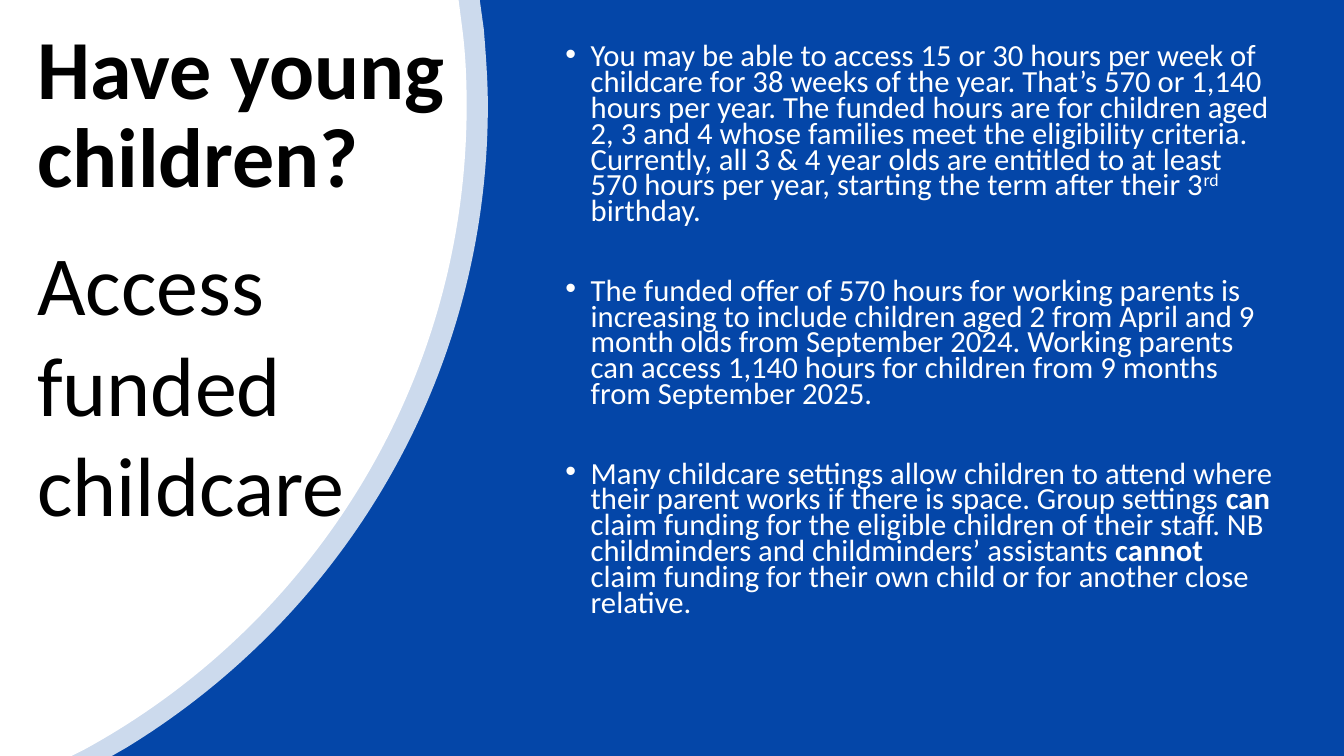
from dataclasses import dataclass

from lxml.etree import Element, SubElement
from pptx import Presentation
from pptx.dml.color import RGBColor
from pptx.enum.text import MSO_ANCHOR as Anchor, MSO_AUTO_SIZE as AutoSize, PP_ALIGN as Align
from pptx.oxml.ns import qn
from pptx.util import Pt


@dataclass(frozen=True)
class Theme:
    """Colours, font and type sizes of the slide."""
    blue: str = "0446A8"
    white: str = "FFFFFF"
    black: str = "000000"
    font: str = "Calibri"
    heading: float = 60
    body: float = 21.9


THEME = Theme()

OUTER_EDGE = [(342.72, 0), (345.6, 20.88)]
OUTER_CURVES = [
    [(347.04, 38.88), (348.48, 57.6), (348.48, 75.6)],
    [(348.48, 270), (244.8, 439.92), (90, 534.24)],
]
INNER_EDGE = [(327.6, 0), (330.48, 22.32)]
INNER_CURVES = [
    [(332.64, 39.6), (333.36, 57.6), (333.36, 75.6)],
    [(333.36, 274.32), (222.48, 447.12), (59.76, 535.68)],
]

FUNDING = [
    [
        ("You may be able to access 15 or 30 hours per week of childcare for 38 weeks of the year. "
         "That’s 570 or 1,140 hours per year. The funded hours are for children aged 2, 3 and 4 "
         "whose families meet the eligibility criteria. Currently, all 3 & 4 year olds are entitled "
         "to at least 570 hours per year, starting the term after their 3", ""),
        ("rd", "super"),
        (" birthday.", ""),
    ],
    [
        ("The funded offer of 570 hours for working parents is increasing to include children aged 2 "
         "from April and 9 month olds from September 2024. Working parents can access 1,140 hours "
         "for children from 9 months from September 2025.", ""),
    ],
    [
        ("Many childcare settings allow children to attend where their parent works if there is "
         "space. Group settings ", ""),
        ("can", "bold"),
        (" claim funding for the eligible children of their staff. NB childminders and "
         "childminders’ assistants ", ""),
        ("cannot", "bold"),
        (" claim funding for their own child or for another close relative.", ""),
    ],
]


def bend(line, handles):
    """Turn a straight path segment into a cubic curve with two handles."""
    line.tag = qn("a:cubicBezTo")
    for index, (x, y) in enumerate(handles):
        point = Element(qn("a:pt"), x=str(Pt(x)), y=str(Pt(y)))
        line.insert(index, point)


def add_panel(page, edge, curves, foot, opacity=100):
    """Add a white panel with a curved right edge that meets the slide foot."""
    corners = edge + [curve[-1] for curve in curves] + [(foot, 540), (0, 540)]
    builder = page.shapes.build_freeform(0, 0, scale=1.0)
    builder.add_line_segments([(Pt(x), Pt(y)) for x, y in corners], close=True)
    panel = builder.convert_to_shape()
    lines = list(panel.element.iter(qn("a:lnTo")))
    for line, curve in zip(lines[len(edge):], curves):
        bend(line, curve[:2])
    panel.shadow.inherit = False
    panel.line.fill.background()
    panel.fill.solid()
    panel.fill.fore_color.rgb = RGBColor.from_string(THEME.white)
    if opacity < 100:
        colour = panel.element.spPr.find(f"{qn('a:solidFill')}/{qn('a:srgbClr')}")
        SubElement(colour, qn("a:alpha")).set("val", str(opacity * 1000))


def place(box, left, top, width, height):
    """Set the position and frame of a text shape and return its frame."""
    box.left, box.top, box.width, box.height = map(Pt, (left, top, width, height))
    frame = box.text_frame
    frame.word_wrap = True
    frame.auto_size = AutoSize.NONE
    frame.vertical_anchor = Anchor.TOP
    return frame


def add_span(para, text, size, colour, style=""):
    """Add one formatted run to a paragraph."""
    span = para.add_run()
    span.text = text
    span.font.name = THEME.font
    span.font.size = Pt(size)
    span.font.bold = style == "bold"
    span.font.color.rgb = RGBColor.from_string(colour)
    if style == "super":
        span.font._element.set("baseline", "30000")


def fill_list(frame, items, indent, gap):
    """Write a bulleted list with a hanging indent and gaps between its items."""
    for index, item in enumerate(items):
        para = frame.add_paragraph() if index else frame.paragraphs[0]
        para.alignment = Align.LEFT
        para.line_spacing = 0.7
        para.space_before = Pt(gap if index else 0)
        props = para._p.get_or_add_pPr()
        props.set("marL", str(Pt(indent)))
        props.set("indent", str(-Pt(indent)))
        SubElement(props, qn("a:buFont")).set("typeface", "Arial")
        SubElement(props, qn("a:buChar")).set("char", "•")
        for text, style in item:
            add_span(para, text, THEME.body, THEME.white, style)


def fill_heading(frame, text, spacing, style=""):
    """Write one large left-aligned heading."""
    frame.margin_right = 0
    para = frame.paragraphs[0]
    para.alignment = Align.LEFT
    para.line_spacing = spacing
    add_span(para, text, THEME.heading, THEME.black, style)


def main():
    """Build the childcare slide and save it."""
    deck = Presentation()
    deck.slide_width, deck.slide_height = Pt(960), Pt(540)
    page = deck.slides.add_slide(deck.slide_layouts[1])
    page.background.fill.solid()
    page.background.fill.fore_color.rgb = RGBColor.from_string(THEME.blue)

    add_panel(page, OUTER_EDGE, OUTER_CURVES, 79.92, opacity=80)
    add_panel(page, INNER_EDGE, INNER_CURVES, 51.12)

    title, body = page.shapes.title, page.placeholders[1]
    for holder in (title, body):
        holder.element.getparent().append(holder.element)
    fill_heading(place(title, 19.44, 16.5, 307.44, 166.5), "Have young children?", 0.88, "bold")
    fill_list(place(body, 396.72, 29.5, 521.28, 451.44), FUNDING, 18, 38.4)

    subtitle = page.shapes.add_textbox(0, 0, 0, 0)
    fill_heading(place(subtitle, 19.44, 161.7, 260.64, 225.36), "Access funded childcare", 1.0)

    deck.save("out.pptx")


if __name__ == "__main__":
    main()
